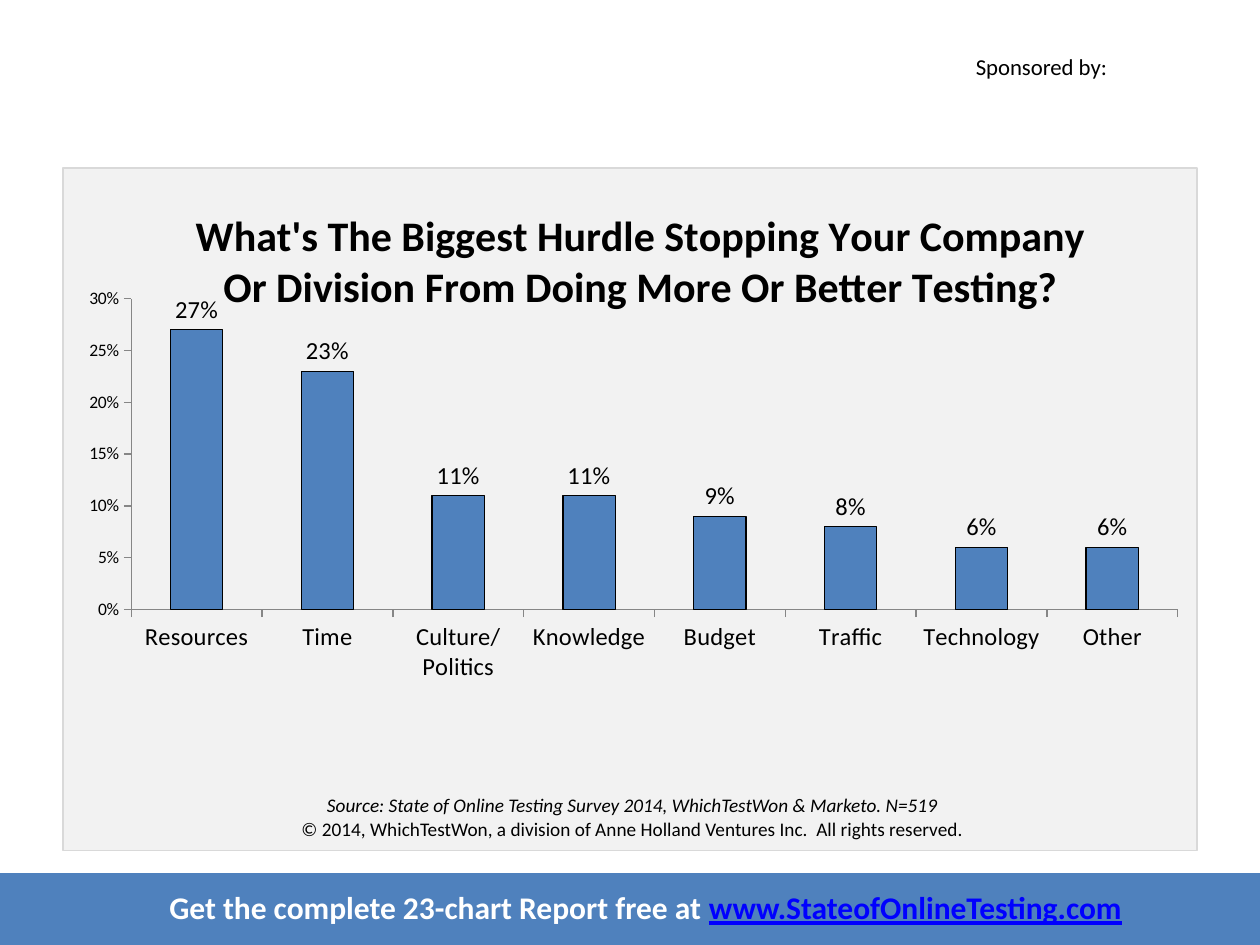
import pptx
import pptx.chart.data
import pptx.dml.color
import pptx.enum.chart
import pptx.enum.shapes
import pptx.enum.text
import pptx.oxml
import pptx.util
from pptx.util import Pt

FONT = "Calibri"
BLACK, WHITE, BLUE = "000000", "FFFFFF", "4F81BD"
PANEL, EDGE, AXIS, LINK = "F2F2F2", "D9D9D9", "868686", "0000FF"
CENTER = pptx.enum.text.PP_ALIGN.CENTER

HURDLES = {
    "Resources": 0.27, "Time": 0.23, "Culture/Politics": 0.11,
    "Knowledge": 0.11, "Budget": 0.09, "Traffic": 0.08,
    "Technology": 0.06, "Other": 0.06,
}


def color(hue):
    return pptx.dml.color.RGBColor.from_string(hue)


def paint(part, fill, line=None, width=1):
    part.fill.solid()
    part.fill.fore_color.rgb = color(fill)
    if line:
        part.line.color.rgb = color(line)
        part.line.width = Pt(width)
    else:
        part.line.fill.background()


def style(font, size, hue=BLACK, bold=False, italic=False):
    font.name = FONT
    font.size = Pt(size)
    font.color.rgb = color(hue)
    font.bold = bold
    font.italic = italic


def rect(slide, box, fill, line=None):
    kind = pptx.enum.shapes.MSO_SHAPE.RECTANGLE
    shape = slide.shapes.add_shape(kind, *map(Pt, box))
    shape.shadow.inherit = False
    paint(shape, fill, line)


def label(slide, box):
    """Add an empty wrapped text box and return its text frame."""
    frame = slide.shapes.add_textbox(*map(Pt, box)).text_frame
    frame.word_wrap = True
    return frame


def sponsor(slide, box):
    frame = label(slide, box)
    frame.text = "Sponsored by:"
    style(frame.paragraphs[0].runs[0].font, 13)


def banner(slide, box):
    left, top, width, height = box
    rect(slide, box, BLUE)
    frame = label(slide, (left + 48, top + 5, width - 78, height - 12))
    line = frame.paragraphs[0]
    line.alignment = CENTER
    for text, hue in (("Get the complete 23-chart Report free at ", WHITE),
                      ("www.StateofOnlineTesting.com", LINK)):
        run = line.add_run()
        run.text = text
        style(run.font, 18, hue, bold=True)
        run.font.underline = hue == LINK


def source(slide, box):
    frame = label(slide, box)
    frame.text = ("Source: State of Online Testing Survey 2014, "
                  "WhichTestWon & Marketo. N=519\n"
                  "© 2014, WhichTestWon, a division of Anne Holland "
                  "Ventures Inc.  All rights reserved.")
    for line, italic in zip(frame.paragraphs, (True, False)):
        line.alignment = CENTER
        style(line.runs[0].font, 11, italic=italic)


def place(parent, index, **spots):
    """Give a chart part a manual layout in fractions of the chart."""
    space = pptx.oxml.ns.nsdecls("c")
    for old in parent.findall(pptx.oxml.ns.qn("c:layout")):
        parent.remove(old)
    inner = '<c:layoutTarget val="inner"/>' if "w" in spots else ""
    modes = "".join(f'<c:{k}Mode val="edge"/>' for k in "xy")
    sizes = "".join(f'<c:{k} val="{v}"/>' for k, v in spots.items())
    parent.insert(index, pptx.oxml.parse_xml(
        f"<c:layout {space}><c:manualLayout>{inner}{modes}{sizes}"
        "</c:manualLayout></c:layout>"))


def axes(chart):
    for axis, size in ((chart.category_axis, 14), (chart.value_axis, 10)):
        axis.has_major_gridlines = False
        axis.major_tick_mark = pptx.enum.chart.XL_TICK_MARK.OUTSIDE
        axis.format.line.color.rgb = color(AXIS)
        axis.format.line.width = Pt(0.75)
        style(axis.tick_labels.font, size)
    scale = chart.value_axis
    scale.minimum_scale, scale.maximum_scale = 0, 0.3
    scale.major_unit = 0.05
    scale.tick_labels.number_format = "0%"
    scale.tick_labels.number_format_is_linked = False


def bars(slide, box):
    data = pptx.chart.data.CategoryChartData(number_format="0%")
    data.categories = list(HURDLES)
    data.add_series("Series 1", HURDLES.values())
    kind = pptx.enum.chart.XL_CHART_TYPE.COLUMN_CLUSTERED
    chart = slide.shapes.add_chart(kind, *map(Pt, box), data).chart
    chart.has_legend = False
    style(chart.font, 10)

    title = chart.chart_title
    title.text_frame.text = (
        "What's The Biggest Hurdle Stopping Your Company "
        "Or Division From Doing More Or Better Testing?")
    style(title.text_frame.paragraphs[0].runs[0].font, 24, bold=True)
    place(title._element, 1, x=0.11, y=0.05)

    axes(chart)
    plot = chart.plots[0]
    plot.gap_width = 150
    plot.vary_by_categories = False
    paint(plot.series[0].format, BLUE, BLACK, 0.75)
    plot.has_data_labels = True
    marks = plot.data_labels
    marks.show_value = True
    marks.position = pptx.enum.chart.XL_LABEL_POSITION.OUTSIDE_END
    marks.number_format = "0%"
    marks.number_format_is_linked = False
    style(marks.font, 14)
    place(plot._element.getparent(), 0, x=0.06, y=0.21, w=0.92, h=0.5)


def main():
    deck = pptx.Presentation()
    deck.slide_width, deck.slide_height = Pt(720), Pt(540)
    slide = deck.slides.add_slide(deck.slide_layouts[6])
    rect(slide, (36, 96, 648, 390), PANEL, EDGE)
    banner(slide, (0, 499, 720, 41))
    sponsor(slide, (550.5, 26.5, 112, 23))
    bars(slide, (36, 96, 650, 355.5))
    source(slide, (37.5, 450, 648, 27.5))
    deck.save("out.pptx")


if __name__ == "__main__":
    main()
